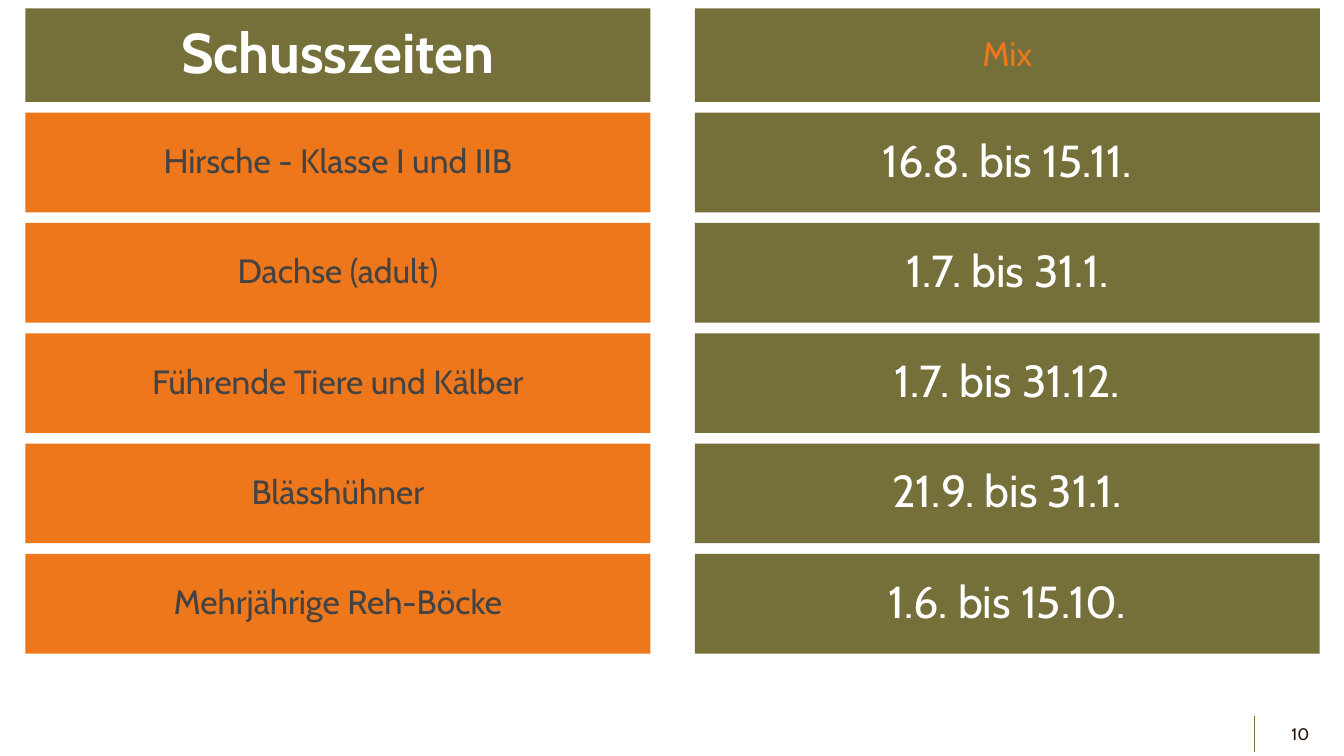
from lxml.etree import SubElement
from pptx import Presentation
from pptx.dml.color import RGBColor
from pptx.enum.shapes import MSO_CONNECTOR, MSO_SHAPE
from pptx.enum.text import MSO_ANCHOR, MSO_AUTO_SIZE, PP_ALIGN
from pptx.oxml.ns import qn
from pptx.util import Cm, Pt

RECTANGLE = MSO_SHAPE.RECTANGLE
STRAIGHT = MSO_CONNECTOR.STRAIGHT
MIDDLE = MSO_ANCHOR.MIDDLE
NO_AUTOFIT = MSO_AUTO_SIZE.NONE
CENTER, RIGHT = PP_ALIGN.CENTER, PP_ALIGN.RIGHT
COMPARISON_LAYOUT = 4

FONT = "Cabin"
COLORS = {
    "olive": "756F3A",
    "orange": "EE771B",
    "white": "FFFFFF",
    "gray": "434343",
    "brown": "231001",
}
SEASONS = [
    ("Hirsche - Klasse I und IIB", "16.8. bis 15.11."),
    ("Dachse (adult)", "1.7. bis 31.1."),
    ("Führende Tiere und Kälber", "1.7. bis 31.12."),
    ("Blässhühner", "21.9. bis 31.1."),
    ("Mehrjährige Reh-Böcke", "1.6. bis 15.10."),
]
COLUMN_WIDTH, COLUMN_STEP = 15.75, 16.87
HEADER_HEIGHT = 2.36
ROW_HEIGHT, ROW_STEP = 2.51, 2.78


def color(name):
    """Return the named colour."""
    return RGBColor.from_string(COLORS[name])


def write(box, text, size, ink, bold=False, align=CENTER, spacing=0.9):
    """Write one formatted line of text, without a bullet, into a box."""
    frame = box.text_frame
    frame.word_wrap = True
    frame.auto_size = NO_AUTOFIT
    frame.vertical_anchor = MIDDLE
    para = frame.paragraphs[0]
    properties = para._p.get_or_add_pPr()
    properties.set("marL", "0")
    properties.set("indent", "0")
    SubElement(properties, qn("a:buNone"))
    para.alignment = align
    para.line_spacing = spacing
    para.space_before = Pt(0)
    span = para.add_run()
    span.text = text
    span.font.name = FONT
    span.font.size = Pt(size)
    span.font.bold = bold
    span.font.color.rgb = color(ink)


def add_panel(page, left, top, height, fill, text, size, ink, bold=False, holder=None):
    """Fill a placeholder, or a new rectangle, with a centred line of text."""
    place = Cm(left), Cm(top), Cm(COLUMN_WIDTH), Cm(height)
    if holder is None:
        box = page.shapes.add_shape(RECTANGLE, *place)
        box.shadow.inherit = False
    else:
        box = page.placeholders[holder]
        box.left, box.top, box.width, box.height = place
    box.fill.solid()
    box.fill.fore_color.rgb = color(fill)
    box.line.fill.background()
    write(box, text, size, ink, bold)


def add_header(page, left, top):
    """Add the title and the category side by side."""
    add_panel(page, left, top, HEADER_HEIGHT, "olive", "Schusszeiten", 40, "white",
              bold=True, holder=0)
    add_panel(page, left + COLUMN_STEP, top, HEADER_HEIGHT, "olive", "Mix", 24, "orange",
              holder=2)


def add_seasons(page, left, top):
    """Add one row per animal with its hunting season."""
    for index, (animal, season) in enumerate(SEASONS):
        animal_holder, season_holder = (1, 3) if index == 0 else (None, None)
        row_top = top + index * ROW_STEP
        add_panel(page, left, row_top, ROW_HEIGHT, "orange", animal, 24, "gray",
                  holder=animal_holder)
        add_panel(page, left + COLUMN_STEP, row_top, ROW_HEIGHT, "olive", season, 32, "white",
                  holder=season_holder)


def add_page_number(page, left, top):
    """Add the page number with the thin rule beside it."""
    rule = page.shapes.add_connector(STRAIGHT, Cm(left), Cm(top), Cm(left), Cm(top + 0.92))
    rule.line.color.rgb = color("olive")
    rule.line.width = Pt(0.75)
    SubElement(rule._element.spPr, qn("a:effectLst"))
    box = page.shapes.add_textbox(Cm(left + 0.33), Cm(top - 0.05), Cm(1.3), Cm(1.02))
    write(box, "10", 12, "brown", align=RIGHT, spacing=1.0)


def main():
    """Build the slide and save the deck."""
    deck = Presentation()
    deck.slide_width, deck.slide_height = Cm(33.87), Cm(19.05)
    page = deck.slides.add_slide(deck.slide_layouts[COMPARISON_LAYOUT])
    spare = page.placeholders[4]._element
    spare.getparent().remove(spare)
    add_header(page, 0.64, 0.21)
    add_seasons(page, 0.64, 2.84)
    add_page_number(page, 31.62, 18.03)
    deck.save("out.pptx")


if __name__ == "__main__":
    main()
